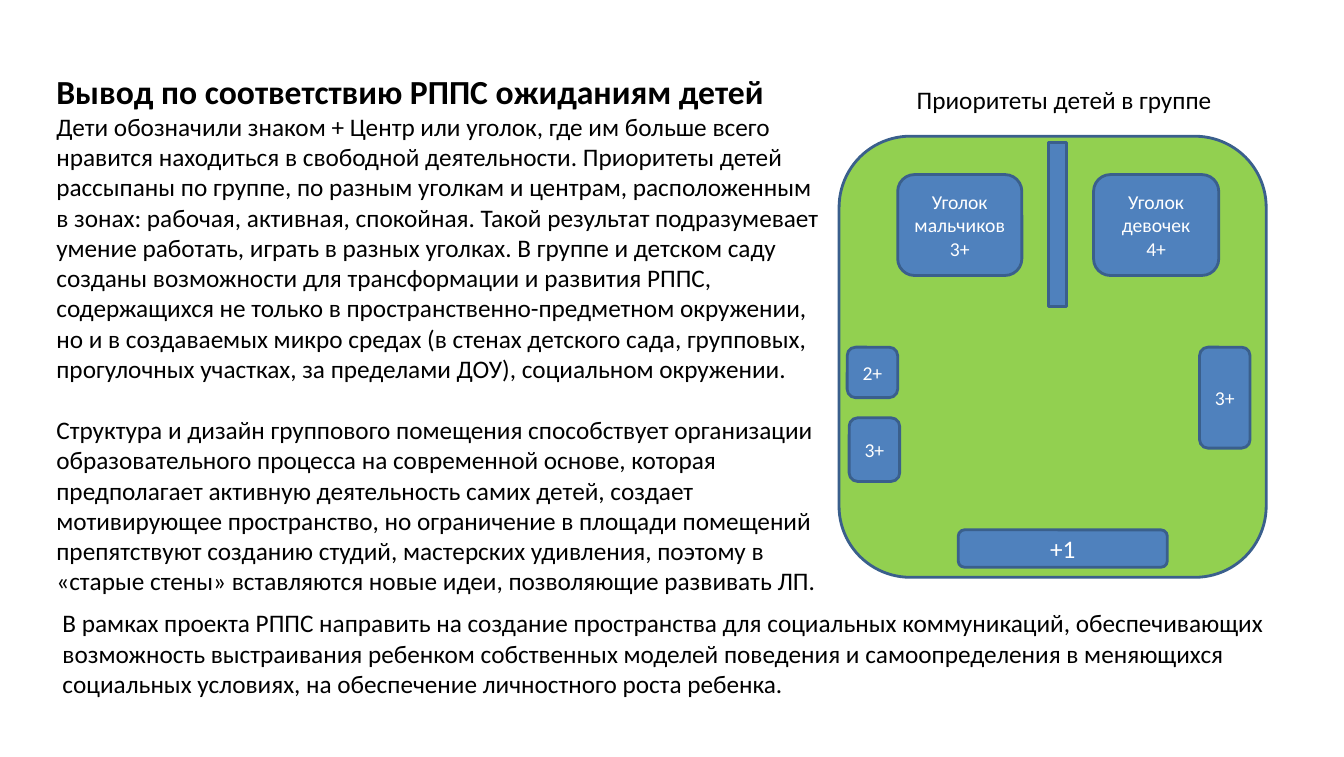
"""Build the slide on children's priorities in the group room."""
from dataclasses import dataclass

from pptx import Presentation
from pptx.dml.color import RGBColor
from pptx.enum.shapes import MSO_SHAPE
from pptx.enum.text import MSO_ANCHOR, PP_ALIGN
from pptx.util import Inches, Pt

RECT = MSO_SHAPE.RECTANGLE
ROUND = MSO_SHAPE.ROUNDED_RECTANGLE
MIDDLE = MSO_ANCHOR.MIDDLE
CENTER = PP_ALIGN.CENTER
FONT = "Calibri"
COLORS = {"room": "92D050", "zone": "4F81BD", "edge": "3A5F8C",
          "ink": "000000", "light": "FFFFFF"}


@dataclass
class Zone:
    left: float
    top: float
    width: float
    height: float
    text: str = ""
    size: int = 14
    fill: str = "zone"
    kind: MSO_SHAPE = ROUND


@dataclass
class Line:
    text: str
    size: int = 18
    bold: bool = False
    gap: int = 0


@dataclass
class Note:
    left: float
    top: float
    width: float
    height: float
    lines: list[Line]
    wrap: bool = True


ZONES = [
    Zone(8.31, 1.35, 4.23, 4.37, fill="room"),
    Zone(10.38, 1.41, 0.18, 1.63, kind=RECT),
    Zone(8.89, 1.73, 1.23, 1, "Уголок мальчиков 3+"),
    Zone(10.83, 1.73, 1.24, 1, "Уголок девочек\n4+"),
    Zone(11.88, 3.44, 0.5, 1, "3+"),
    Zone(8.39, 3.44, 0.5, 0.5, "2+"),
    Zone(8.41, 4.14, 0.5, 0.63, "3+"),
    Zone(9.49, 5.25, 2.07, 0.37, "+1", 18),
]

NOTES = [
    Note(0.46, 0.65, 7.85, 5.35, [
        Line("Вывод по соответствию РППС ожиданиям детей", 24, True),
        Line("Дети обозначили знаком + Центр или уголок, где им больше всего "
             "нравится находиться в свободной деятельности. Приоритеты детей "
             "рассыпаны по группе, по разным уголкам и центрам, расположенным"),
        Line("в зонах: рабочая, активная, спокойная. Такой результат "
             "подразумевает умение работать, играть в разных уголках. В группе "
             "и детском саду созданы возможности для трансформации и развития "
             "РППС, содержащихся не только в пространственно-предметном "
             "окружении, но и в создаваемых микро средах (в стенах детского "
             "сада, групповых, прогулочных участках, за пределами ДОУ), "
             "социальном окружении."),
        Line("Структура и дизайн группового помещения способствует организации "
             "образовательного процесса на современной основе, которая "
             "предполагает активную деятельность самих детей, создает "
             "мотивирующее пространство, но ограничение в площади помещений "
             "препятствуют созданию студий, мастерских удивления, поэтому в "
             "«старые стены» вставляются новые идеи, позволяющие развивать ЛП.",
             gap=22),
    ]),
    Note(8.98, 0.79, 3.16, 0.4, [Line("Приоритеты детей в группе")], False),
    Note(0.52, 5.97, 12.59, 1.01, [
        Line("В рамках проекта РППС направить на создание пространства для "
             "социальных коммуникаций, обеспечивающих возможность выстраивания "
             "ребенком собственных моделей поведения и самоопределения в "
             "меняющихся социальных условиях, на обеспечение личностного роста "
             "ребенка."),
    ]),
]


def color(name: str) -> RGBColor:
    return RGBColor.from_string(COLORS[name])


def place(item: Zone | Note) -> list[int]:
    return [Inches(n) for n in (item.left, item.top, item.width, item.height)]


def style(para, size: int, ink: str, bold: bool = False) -> None:
    for run in para.runs:
        font = run.font
        font.name, font.size, font.bold = FONT, Pt(size), bold
        font.color.rgb = color(ink)


def draw_zone(slide, zone: Zone) -> None:
    shape = slide.shapes.add_shape(zone.kind, *place(zone))
    shape.shadow.inherit = False
    shape.fill.solid()
    shape.fill.fore_color.rgb = color(zone.fill)
    shape.line.color.rgb = color("edge")
    shape.line.width = Pt(2)
    if zone.text:
        frame = shape.text_frame
        frame.text = zone.text
        frame.word_wrap = True
        frame.vertical_anchor = MIDDLE
        for para in frame.paragraphs:
            para.alignment = CENTER
            style(para, zone.size, "light")


def draw_note(slide, note: Note) -> None:
    frame = slide.shapes.add_textbox(*place(note)).text_frame
    frame.word_wrap = note.wrap
    frame.text = "\n".join(line.text for line in note.lines)
    for para, line in zip(frame.paragraphs, note.lines):
        if line.gap:
            para.space_before = Pt(line.gap)
        style(para, line.size, "ink", line.bold)


def main() -> None:
    deck = Presentation()
    deck.slide_width, deck.slide_height = Inches(13.31), Inches(7.5)
    slide = deck.slides.add_slide(deck.slide_layouts[6])
    for zone in ZONES:
        draw_zone(slide, zone)
    for note in NOTES:
        draw_note(slide, note)
    deck.save("out.pptx")


if __name__ == "__main__":
    main()
